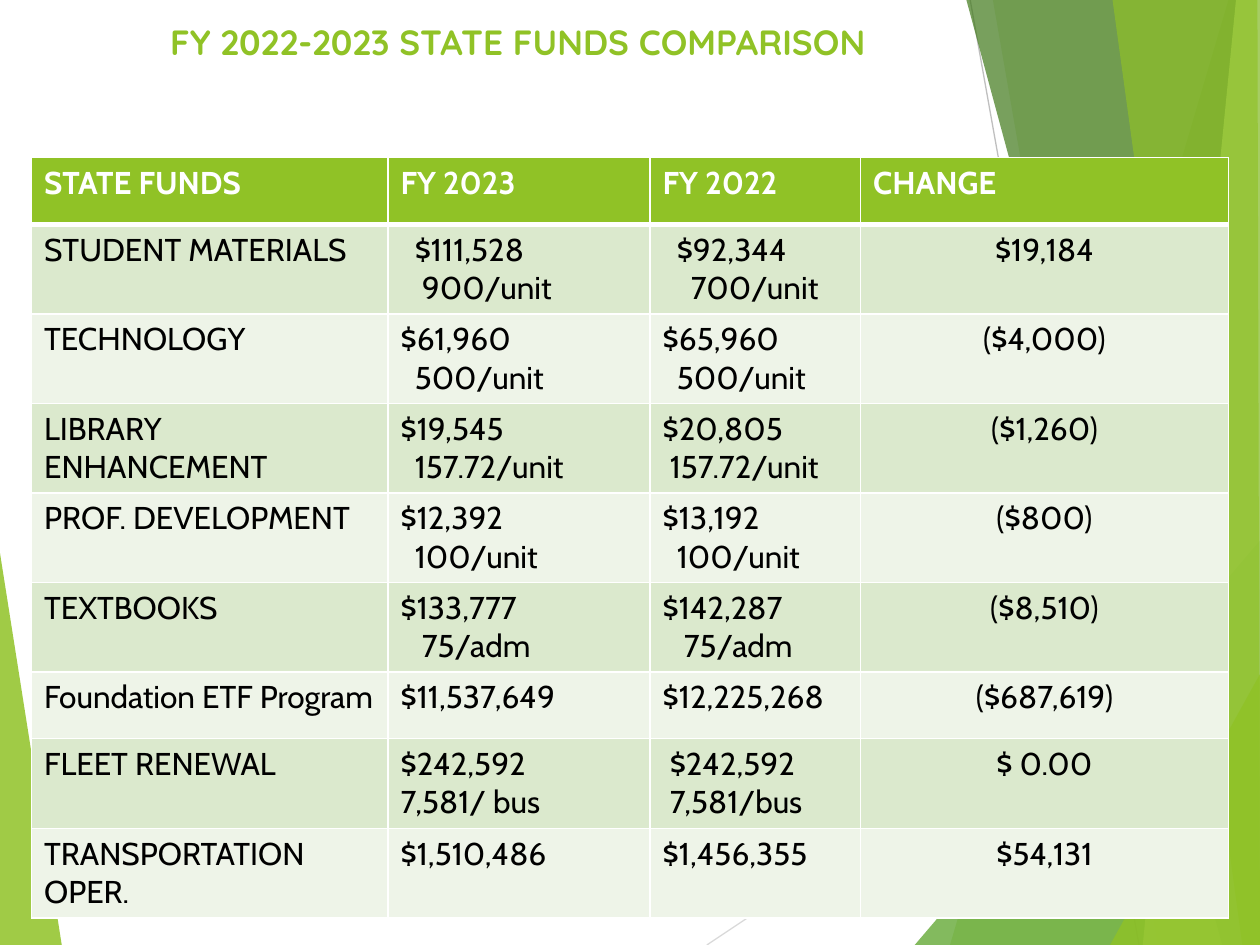
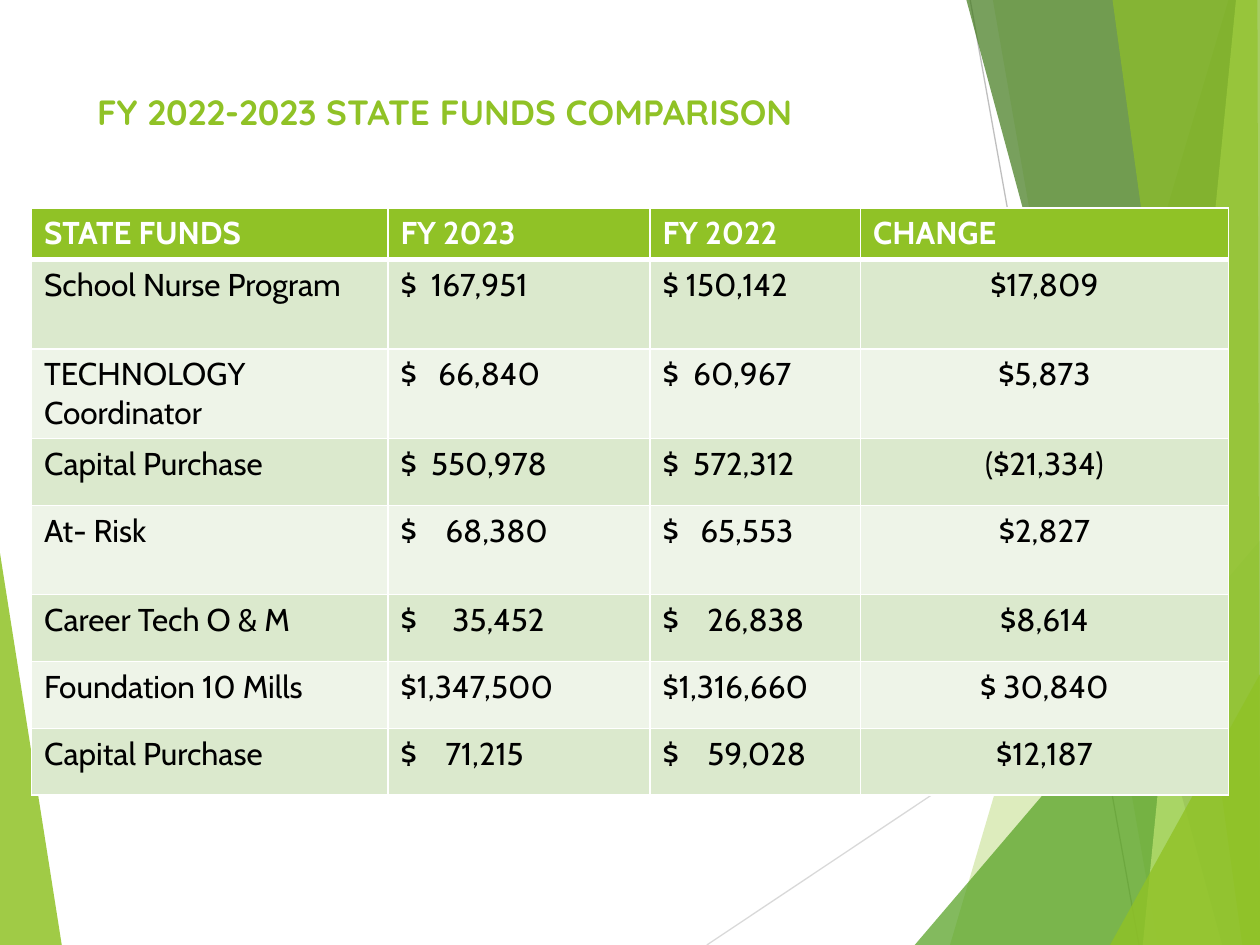
from dataclasses import dataclass

from lxml import etree
from pptx import Presentation
from pptx.dml.color import RGBColor
from pptx.enum.shapes import MSO_CONNECTOR
from pptx.enum.text import MSO_ANCHOR, MSO_AUTO_SIZE, PP_ALIGN
from pptx.oxml.ns import qn
from pptx.util import Inches, Pt

# ---- Content ----
# A cell is a line or a list of lines. A line is text, or (gap, text): the gap,
# in space widths, indents the line or, with a tab, follows the dollar sign.
TITLE = "FY 2022-2023 STATE FUNDS COMPARISON"
HEADINGS = ["STATE FUNDS", "FY 2023", "FY 2022", "CHANGE"]

# Each fund: lines its row is tall, name, FY 2023, FY 2022, change
ALLOCATIONS = [
    (2, "STUDENT MATERIALS", [(2, "$111,528"), (3, "900/unit")],
     [(2, "$92,344"), (4, "700/unit")], "$19,184"),
    (2, "TECHNOLOGY", ["$61,960", (2, "500/unit")],
     ["$65,960", (2, "500/unit")], "($4,000)"),
    (2, "LIBRARY ENHANCEMENT", ["$19,545", (2, "157.72/unit")],
     ["$20,805", (1, "157.72/unit")], "($1,260)"),
    (2, "PROF. DEVELOPMENT", ["$12,392", (2, "100/unit")],
     ["$13,192", (2, "100/unit")], "($800)"),
    (2, "TEXTBOOKS", ["$133,777", (3, "75/adm")],
     ["$142,287", (3, "75/adm")], "($8,510)"),
    (1, "Foundation ETF Program", "$11,537,649", "$12,225,268", "($687,619)"),
    (2, "FLEET RENEWAL", ["$242,592", "7,581/ bus"],
     [(1, "$242,592"), (1, "7,581/bus")], "$ 0.00"),
    (2, "TRANSPORTATION OPER.", "$1,510,486", "$1,456,355", "$54,131"),
]
PROGRAMS = [
    (2, "School Nurse Program", (2, "$\t167,951"), "$ 150,142", "$17,809"),
    (2, "TECHNOLOGY Coordinator", (3, "$\t66,840"), (2, "$\t60,967"), "$5,873"),
    (1, "Capital Purchase", (2, "$\t550,978"), (2, "$\t572,312"), "($21,334)"),
    (2, "At- Risk", (4, "$\t68,380"), (3, "$\t65,553"), "$2,827"),
    (1, "Career Tech O & M", (5, "$\t35,452"), (4, "$\t26,838"), "$8,614"),
    (1, "Foundation 10 Mills", "$1,347,500", "$1,316,660", "$ 30,840"),
    (1, "Capital Purchase", (4, "$\t71,215"), (4, "$\t59,028"), "$12,187"),
]
SLIDES = [
    {"title_box": (1.25, 0.11, 7.22, 1.66), "table_top": 1.25,
     "header_height": 0.53, "funds": ALLOCATIONS},
    {"title_box": (0.67, 0.67, 6.94, 1.44), "table_top": 1.65,
     "header_height": 0.41, "funds": PROGRAMS},
]


# ---- Theme and grid ----
@dataclass(frozen=True)
class Theme:
    lime: str = "90C226"
    leaf: str = "54A021"
    forest: str = "3F7819"
    pale: str = "C0E474"
    white: str = "FFFFFF"
    ink: str = "000000"
    bands: tuple = ("DBE9CD", "EEF4E8")
    title_font: str = "Quicksand"
    body_font: str = "Cabin"
    title_size: int = 20
    body_size: int = 18


THEME = Theme()
WIDTH, HEIGHT = 10, 7.5
TABLE_LEFT = 0.25
COLUMNS = [2.83, 2.08, 1.67, 2.92]
ROW_HEIGHTS = {1: 0.53, 2: 0.71}
SPACE, DOLLAR = 0.056, 0.13

# Backdrop: hairlines (from, to, colour), then facets (colour, opacity, corners)
LEFT_FACET = (THEME.lime, 85, [(0, 4.39), (0.49, HEIGHT), (0, HEIGHT)])
HAIRLINES = [
    ((5.61, HEIGHT), (WIDTH, 4.57), "D9D9D9"),
    ((7.7, 0), (9.04, HEIGHT), "BFBFBF"),
]
BOTTOM_RIGHT, TOP_RIGHT = (WIDTH, HEIGHT), (WIDTH, 0)
RIGHT_FACETS = [
    (THEME.lime, 30, [(9.75, 0), (7.54, HEIGHT), BOTTOM_RIGHT, TOP_RIGHT]),
    (THEME.lime, 20, [(7.88, 0), (9.19, HEIGHT), BOTTOM_RIGHT, TOP_RIGHT]),
    (THEME.leaf, 72, [(7.26, HEIGHT), (WIDTH, 4.29), BOTTOM_RIGHT]),
    (THEME.forest, 70, [(7.67, 0), (9.7, HEIGHT), BOTTOM_RIGHT, TOP_RIGHT]),
    (THEME.pale, 70, [(9.81, 0), (9.07, HEIGHT), BOTTOM_RIGHT, TOP_RIGHT]),
    (THEME.lime, 65, [(8.83, 0), (9.86, HEIGHT), BOTTOM_RIGHT, (9.98, 0)]),
    (THEME.lime, 80, [(8.81, HEIGHT), (WIDTH, 5.35), BOTTOM_RIGHT]),
]


# ---- Text ----
def write(frame, text, *, font=THEME.body_font, size=THEME.body_size,
          color=THEME.ink, bold=False, align=PP_ALIGN.LEFT):
    lines = text if isinstance(text, list) else [text]
    for index, line in enumerate(lines):
        gap, words = line if isinstance(line, tuple) else (0, line)
        paragraph = frame.add_paragraph() if index else frame.paragraphs[0]
        paragraph.alignment = align
        run = paragraph.add_run()
        run.text = words
        run.font.name, run.font.size, run.font.bold = font, Pt(size), bold
        run.font.color.rgb = RGBColor.from_string(color)
        properties = paragraph._p.get_or_add_pPr()
        if "\t" in words:
            stops = etree.SubElement(properties, qn("a:tabLst"))
            etree.SubElement(stops, qn("a:tab"), algn="l",
                             pos=str(Inches(DOLLAR + gap * SPACE)))
        elif gap:
            properties.set("marL", str(Inches(gap * SPACE)))
            properties.set("indent", "0")


# ---- Backdrop ----
def add_facet(slide, color, opacity, corners):
    points = [(Inches(x), Inches(y)) for x, y in corners]
    builder = slide.shapes.build_freeform(*points[0])
    builder.add_line_segments(points[1:], close=True)
    facet = builder.convert_to_shape()
    facet.shadow.inherit = False
    facet.line.fill.background()
    facet.fill.solid()
    facet.fill.fore_color.rgb = RGBColor.from_string(color)
    tint = facet._element.spPr.find(".//" + qn("a:srgbClr"))
    etree.SubElement(tint, qn("a:alpha"), val=str(opacity * 1000))


def add_hairline(slide, start, end, color):
    ends = [Inches(value) for value in (*start, *end)]
    hairline = slide.shapes.add_connector(MSO_CONNECTOR.STRAIGHT, *ends)
    hairline.line.color.rgb = RGBColor.from_string(color)
    hairline.line.width = Pt(0.75)
    etree.SubElement(hairline._element.spPr, qn("a:effectLst"))


def add_backdrop(slide):
    add_facet(slide, *LEFT_FACET)
    for hairline in HAIRLINES:
        add_hairline(slide, *hairline)
    for facet in RIGHT_FACETS:
        add_facet(slide, *facet)


# ---- Title ----
def set_title(slide, box):
    title = slide.shapes.title
    title.left, title.top, title.width, title.height = map(Inches, box)
    frame = title.text_frame
    frame.word_wrap = True
    frame.auto_size = MSO_AUTO_SIZE.NONE
    frame.vertical_anchor = MSO_ANCHOR.TOP
    write(frame, TITLE, font=THEME.title_font, size=THEME.title_size,
          color=THEME.lime, bold=True)
    slide.shapes._spTree.append(title._element)  # bring above the backdrop


# ---- Table ----
def style_cell(cell, fill, top=1, bottom=1):
    properties = cell._tc.get_or_add_tcPr()
    for side, points in zip("LRTB", (1, 1, top, bottom)):
        border = etree.SubElement(properties, qn(f"a:ln{side}"), w=str(Pt(points)))
        solid = etree.SubElement(border, qn("a:solidFill"))
        etree.SubElement(solid, qn("a:srgbClr"), val=THEME.white)
    cell.fill.solid()
    cell.fill.fore_color.rgb = RGBColor.from_string(fill)


def add_funds_table(slide, top, header_height, funds):
    heights = [header_height] + [ROW_HEIGHTS[lines] for lines, *_ in funds]
    table = slide.shapes.add_table(
        len(heights), len(COLUMNS), Inches(TABLE_LEFT), Inches(top),
        Inches(sum(COLUMNS)), Inches(sum(heights))).table
    for column, width in zip(table.columns, COLUMNS):
        column.width = Inches(width)
    for row, height in zip(table.rows, heights):
        row.height = Inches(height)

    for column, heading in enumerate(HEADINGS):
        cell = table.cell(0, column)
        style_cell(cell, THEME.lime, bottom=3)
        write(cell.text_frame, heading, color=THEME.white, bold=True)

    for row, (_, *values) in enumerate(funds, start=1):
        for column, value in enumerate(values):
            cell = table.cell(row, column)
            style_cell(cell, THEME.bands[(row - 1) % 2], top=3 if row == 1 else 1)
            is_change = column == len(COLUMNS) - 1
            write(cell.text_frame, value,
                  align=PP_ALIGN.CENTER if is_change else PP_ALIGN.LEFT)


def main():
    deck = Presentation()
    deck.slide_width, deck.slide_height = Inches(WIDTH), Inches(HEIGHT)
    title_only = deck.slide_layouts[5]
    for content in SLIDES:
        slide = deck.slides.add_slide(title_only)
        add_backdrop(slide)
        set_title(slide, content["title_box"])
        add_funds_table(slide, content["table_top"], content["header_height"],
                        content["funds"])
    deck.save("out.pptx")


if __name__ == "__main__":
    main()
